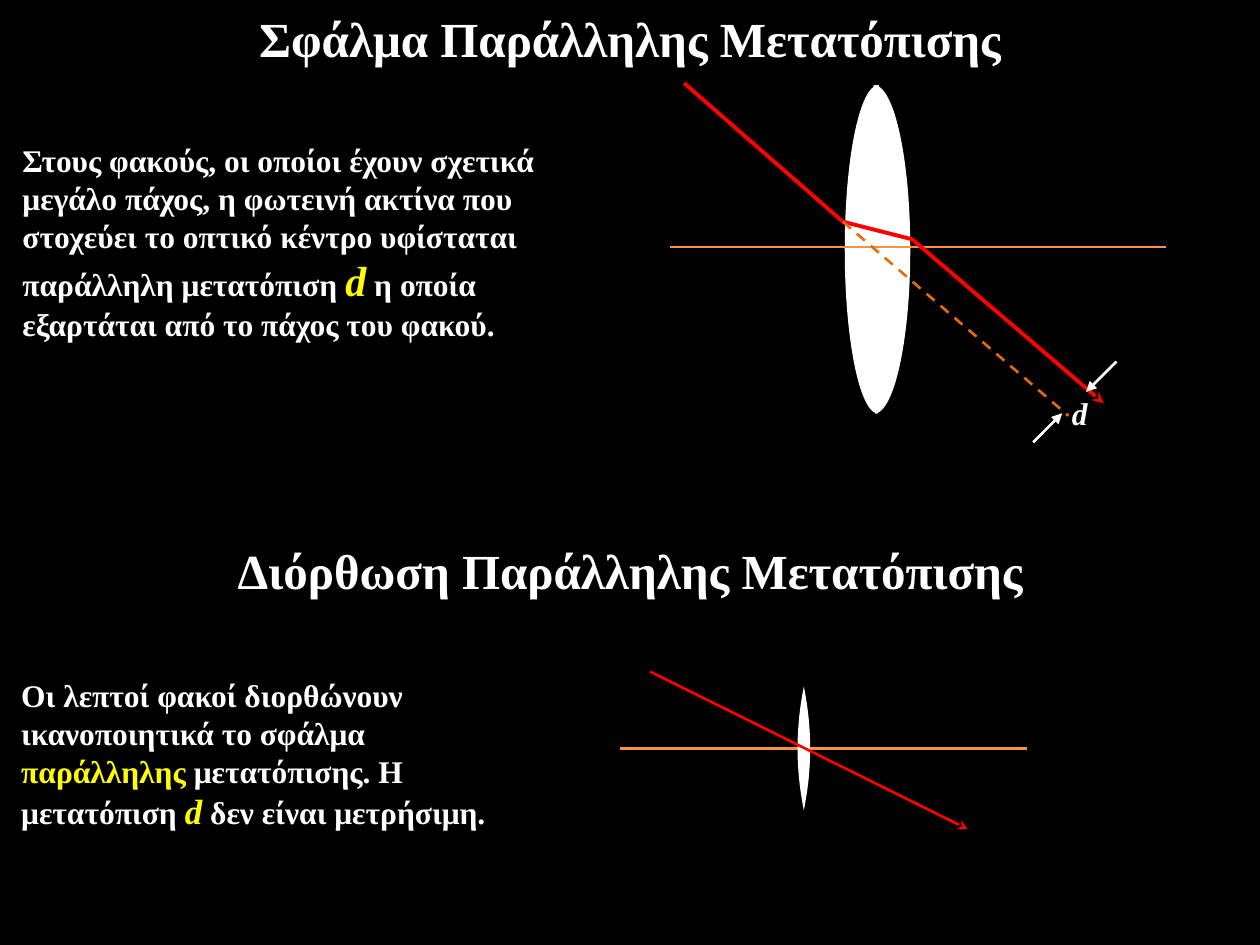
from lxml import etree
from pptx import Presentation
from pptx.dml.color import RGBColor
from pptx.enum.dml import MSO_LINE
from pptx.enum.shapes import MSO_CONNECTOR, MSO_SHAPE
from pptx.enum.text import PP_ALIGN
from pptx.oxml.ns import qn
from pptx.util import Inches, Pt

STRAIGHT = MSO_CONNECTOR.STRAIGHT
ARC = MSO_SHAPE.ARC
DASH = MSO_LINE.DASH
LEFT, CENTER = PP_ALIGN.LEFT, PP_ALIGN.CENTER

FONT = "Times New Roman"
COLORS = {
    "background": "000000",
    "white": "FFFFFF",
    "highlight": "FFFF00",
    "axis": "F69240",
    "undeviated": "E46C0A",
    "ray": "FF0000",
}


def color(name):
    return RGBColor.from_string(COLORS[name])


def add_text(slide, box, runs, size=18, align=LEFT, wrap=True):
    """Each run is a text and a dict of the format that differs."""
    shape = slide.shapes.add_textbox(*map(Inches, box))
    frame = shape.text_frame
    frame.word_wrap = wrap
    paragraph = frame.paragraphs[0]
    paragraph.alignment = align
    for text, style in runs:
        run = paragraph.add_run()
        run.text = text
        font = run.font
        font.name = FONT
        font.bold = True
        font.size = Pt(style.get("size", size))
        font.italic = style.get("italic", False)
        font.color.rgb = color(style.get("color", "white"))


def style_line(shape, name, width, dash=None, arrow=None):
    line = shape.line
    line.color.rgb = color(name)
    line.width = Pt(width)
    if dash:
        line.dash_style = dash
    if arrow:
        outline = shape._element.spPr.find(qn("a:ln"))
        etree.SubElement(outline, qn("a:tailEnd"), type=arrow)


def add_line(slide, start, end, name, width=1.5, **style):
    connector = slide.shapes.add_connector(
        STRAIGHT, *map(Inches, (*start, *end)))
    style_line(connector, name, width, **style)
    etree.SubElement(connector._element.spPr, qn("a:effectLst"))


def add_outline(slide, points, close):
    points = [(Inches(x), Inches(y)) for x, y in points]
    builder = slide.shapes.build_freeform(*points[0])
    builder.add_line_segments(points[1:], close=close)
    shape = builder.convert_to_shape()
    shape.shadow.inherit = False
    return shape


def add_thick_lens_half(slide, box, flip=False):
    shape = slide.shapes.add_shape(ARC, *map(Inches, box))
    shape.shadow.inherit = False
    # Arc angles in units of 5/3 degree: from the top to the bottom
    shape.adjustments[0] = 162
    shape.adjustments[1] = 53.74
    shape.fill.solid()
    shape.fill.fore_color.rgb = color("white")
    style_line(shape, "white", 0.75)
    if flip:
        shape._element.spPr.find(qn("a:xfrm")).set("flipH", "1")


def add_thin_lens_half(slide, center, side, bulge=0.05, half_height=0.49):
    x, y = center
    steps = [step / 12 for step in range(-12, 13)]
    points = [(x + side * bulge * (1 - step ** 2), y + half_height * step)
              for step in steps]
    shape = add_outline(slide, points, close=True)
    shape.fill.solid()
    shape.fill.fore_color.rgb = color("white")
    shape.line.fill.background()


def add_title(slide, top, text):
    add_text(slide, (0, top, 10, 0.53), [(text, {})], size=28, align=CENTER)


def draw_thick_lens(slide):
    add_thick_lens_half(slide, (6.65, 0.68, 0.57, 2.6))
    add_thick_lens_half(slide, (6.71, 0.68, 0.53, 2.6), flip=True)
    add_line(slide, (5.32, 1.96), (9.25, 1.96), "axis")

    # Ray bent at both faces, and the path it would have kept
    entry = (6.69, 1.76)
    ray = add_outline(
        slide, [(5.43, 0.66), entry, (7.24, 1.9), (8.76, 3.2)], close=False)
    ray.fill.background()
    style_line(ray, "ray", 2.25, arrow="stealth")
    add_line(slide, entry, (8.48, 3.3), "undeviated", dash=DASH)

    # Displacement d between the two
    add_line(slide, (8.2, 3.51), (8.43, 3.28), "white", arrow="triangle")
    add_line(slide, (8.86, 2.87), (8.62, 3.11), "white", arrow="triangle")
    add_text(slide, (8.41, 3.08, 0.33, 0.4), [("d", {"italic": True})],
             wrap=False)


def draw_thin_lens(slide):
    add_line(slide, (4.92, 5.94), (8.15, 5.94), "axis")
    for side in (-1, 1):
        add_thin_lens_half(slide, (6.38, 5.94), side)
    add_line(slide, (5.16, 5.33), (7.68, 6.58), "ray", arrow="stealth")


def main():
    presentation = Presentation()
    presentation.slide_width = Inches(10)
    presentation.slide_height = Inches(7.5)
    slide = presentation.slides.add_slide(presentation.slide_layouts[6])
    slide.background.fill.solid()
    slide.background.fill.fore_color.rgb = color("background")

    highlight = {"color": "highlight"}
    symbol = {"color": "highlight", "italic": True}

    # Upper half: the error
    add_title(slide, 0.02, "Σφάλμα Παράλληλης Μετατόπισης")
    add_text(slide, (0.08, 1.07, 4.29, 1.73), [
        ("Στους φακούς, οι οποίοι έχουν σχετικά μεγάλο πάχος, η φωτεινή "
         "ακτίνα που στοχεύει το οπτικό κέντρο υφίσταται παράλληλη "
         "μετατόπιση ", {}),
        ("d", {**symbol, "size": 24}),
        (" η οποία εξαρτάται από το πάχος του φακού.", {}),
    ])
    draw_thick_lens(slide)

    # Lower half: the correction
    add_title(slide, 4.24, "Διόρθωση Παράλληλης Μετατόπισης")
    add_text(slide, (0.07, 5.32, 4.05, 1.34), [
        ("Οι λεπτοί φακοί διορθώνουν ικανοποιητικά το σφάλμα ", {}),
        ("παράλληλης", highlight),
        (" μετατόπισης. Η μετατόπιση ", {}),
        ("d", {**symbol, "size": 20}),
        (" δεν είναι μετρήσιμη.", {}),
    ])
    draw_thin_lens(slide)

    presentation.save("out.pptx")


if __name__ == "__main__":
    main()
